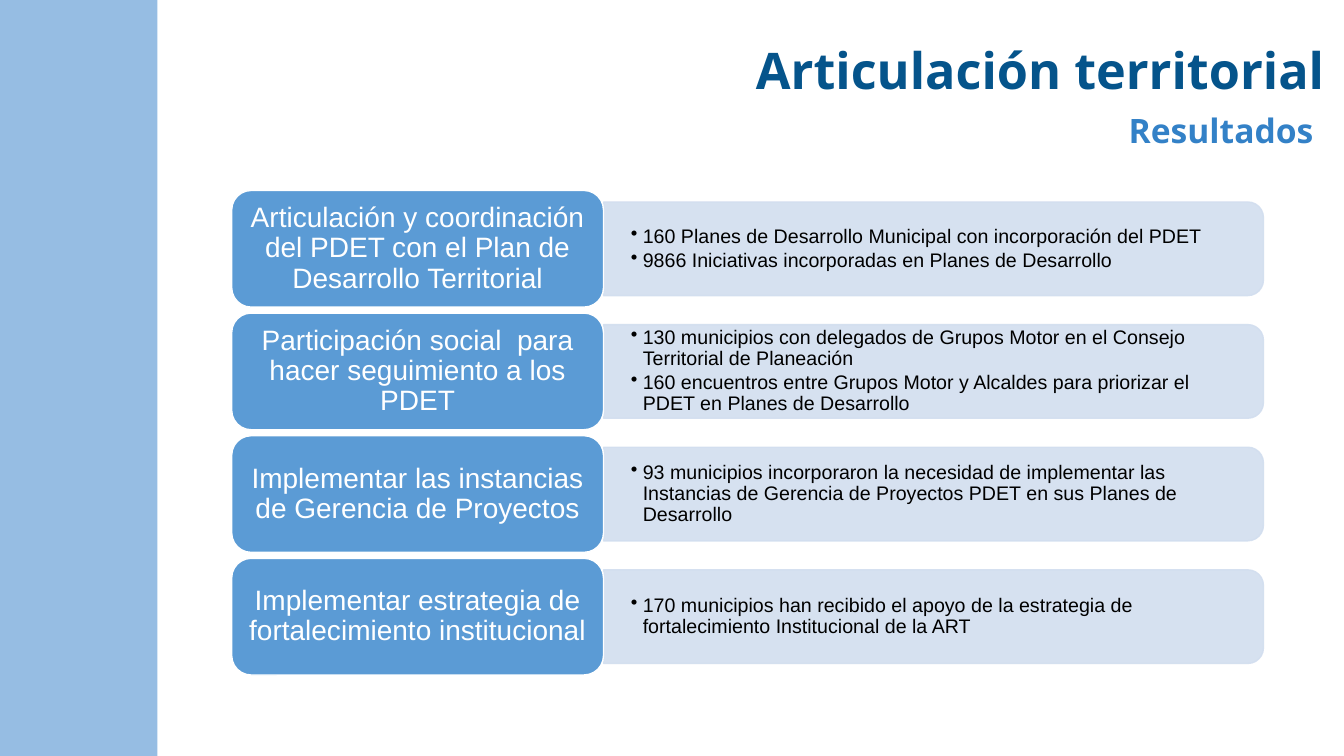
import pptx
import pptx.util
import pptx.dml.color
import pptx.enum.shapes
import pptx.enum.text
import pptx.oxml.ns
from lxml import etree
from pptx.util import Cm, Pt

SHAPE = pptx.enum.shapes.MSO_SHAPE
ALIGN = pptx.enum.text.PP_ALIGN
MIDDLE = pptx.enum.text.MSO_ANCHOR.MIDDLE
qn = pptx.oxml.ns.qn

TITLE = "Articulación territorial"
SUBTITLE = "Resultados"
ROWS = [
    ("Articulación y coordinación del PDET con el Plan de Desarrollo Territorial",
     ["160 Planes de Desarrollo Municipal con incorporación del PDET",
      "9866 Iniciativas incorporadas en Planes de Desarrollo"]),
    ("Participación social  para hacer seguimiento a los PDET",
     ["130 municipios con delegados de Grupos Motor en el Consejo Territorial de Planeación",
      "160 encuentros entre Grupos Motor y Alcaldes para priorizar el PDET en Planes de Desarrollo"]),
    ("Implementar las instancias de Gerencia de Proyectos",
     ["93 municipios incorporaron la necesidad de implementar las Instancias de Gerencia "
      "de Proyectos PDET en sus Planes de Desarrollo"]),
    ("Implementar estrategia de fortalecimiento institucional",
     ["170 municipios han recibido el apoyo de la estrategia de fortalecimiento "
      "Institucional de la ART"]),
]

ROW_TOP, ROW_PITCH = 4.8, 3.09
LABEL_X, LABEL_W, LABEL_H = 5.84, 9.37, 2.94
BAR_X, BAR_W, BAR_H = LABEL_X + LABEL_W, 16.63, 2.36
TEXT_W, TEXT_H = 16.53, 2.13


def rgb(color):
    return pptx.dml.color.RGBColor.from_string(color)


def add_shape(s, kind, x, y, w, h, fill, line=None):
    sp = s.shapes.add_shape(kind, Cm(x), Cm(y), Cm(w), Cm(h))
    sp.shadow.inherit = False
    sp.fill.solid()
    sp.fill.fore_color.rgb = rgb(fill)
    if line:
        sp.line.color.rgb = rgb(line)
        sp.line.width = Pt(1)
    else:
        sp.line.fill.background()
    return sp


def set_insets(tf, x, y):
    tf.margin_left = tf.margin_right = Cm(x)
    tf.margin_top = tf.margin_bottom = Cm(y)


def write(tf, lines, name, size, color, align, bold=False, spacing=1.0, bullet=False):
    tf.word_wrap = True
    tf.auto_size = pptx.enum.text.MSO_AUTO_SIZE.NONE
    tf.vertical_anchor = MIDDLE
    tf.text = "\n".join(lines)
    for p in tf.paragraphs:
        if bullet:
            pPr = p._p.get_or_add_pPr()
            pPr.set("marL", str(Cm(0.3)))
            pPr.set("indent", str(-Cm(0.3)))
            etree.SubElement(pPr, qn("a:buChar")).set("char", "•")
            p.space_after = Pt(2)
        p.alignment = align
        p.line_spacing = spacing
        for r in p.runs:
            r.font.name = name
            r.font.size = Pt(size)
            r.font.bold = bold
            r.font.color.rgb = rgb(color)


def add_row(s, y, label, results):
    middle = y + LABEL_H / 2
    bar = add_shape(s, SHAPE.ROUND_2_SAME_RECTANGLE, BAR_X + (BAR_W - BAR_H) / 2,
                    middle - BAR_W / 2, BAR_H, BAR_W, "D2DEEF", "D2DEEF")
    bar.rotation = 90
    for clr in bar._element.spPr.iter(qn("a:srgbClr")):
        etree.SubElement(clr, qn("a:alpha")).set("val", "90000")
    tb = s.shapes.add_textbox(Cm(BAR_X), Cm(middle - TEXT_H / 2), Cm(TEXT_W), Cm(TEXT_H))
    set_insets(tb.text_frame, 0.69, 0.36)
    write(tb.text_frame, results, "Arial", 14, "000000", ALIGN.LEFT, spacing=0.9, bullet=True)
    box = add_shape(s, SHAPE.ROUNDED_RECTANGLE, LABEL_X, y, LABEL_W, LABEL_H, "5B9BD5", "FFFFFF")
    set_insets(box.text_frame, 0.2, 0.1)
    write(box.text_frame, [label], "Arial", 20, "FFFFFF", ALIGN.CENTER, spacing=0.9)


def main():
    prs = pptx.Presentation()
    prs.slide_width, prs.slide_height = Cm(33.87), Cm(19.05)
    s = prs.slides.add_slide(prs.slide_layouts[5])
    add_shape(s, SHAPE.RECTANGLE, 0, 0, 3.97, 19.05, "96BDE3")

    title = s.shapes.title
    title.left, title.top, title.width, title.height = Cm(15.14), Cm(0.84), Cm(18.49), Cm(1.8)
    write(title.text_frame, [TITLE], "Open Sans", 36, "05548B", ALIGN.RIGHT, bold=True)
    subtitle = s.shapes.add_textbox(Cm(4.34), Cm(2.64), Cm(29.01), Cm(1.27))
    write(subtitle.text_frame, [SUBTITLE], "Open Sans", 24, "3381C7", ALIGN.RIGHT, bold=True)

    for i, (label, results) in enumerate(ROWS):
        add_row(s, ROW_TOP + i * ROW_PITCH, label, results)
    prs.save("out.pptx")


if __name__ == "__main__":
    main()
